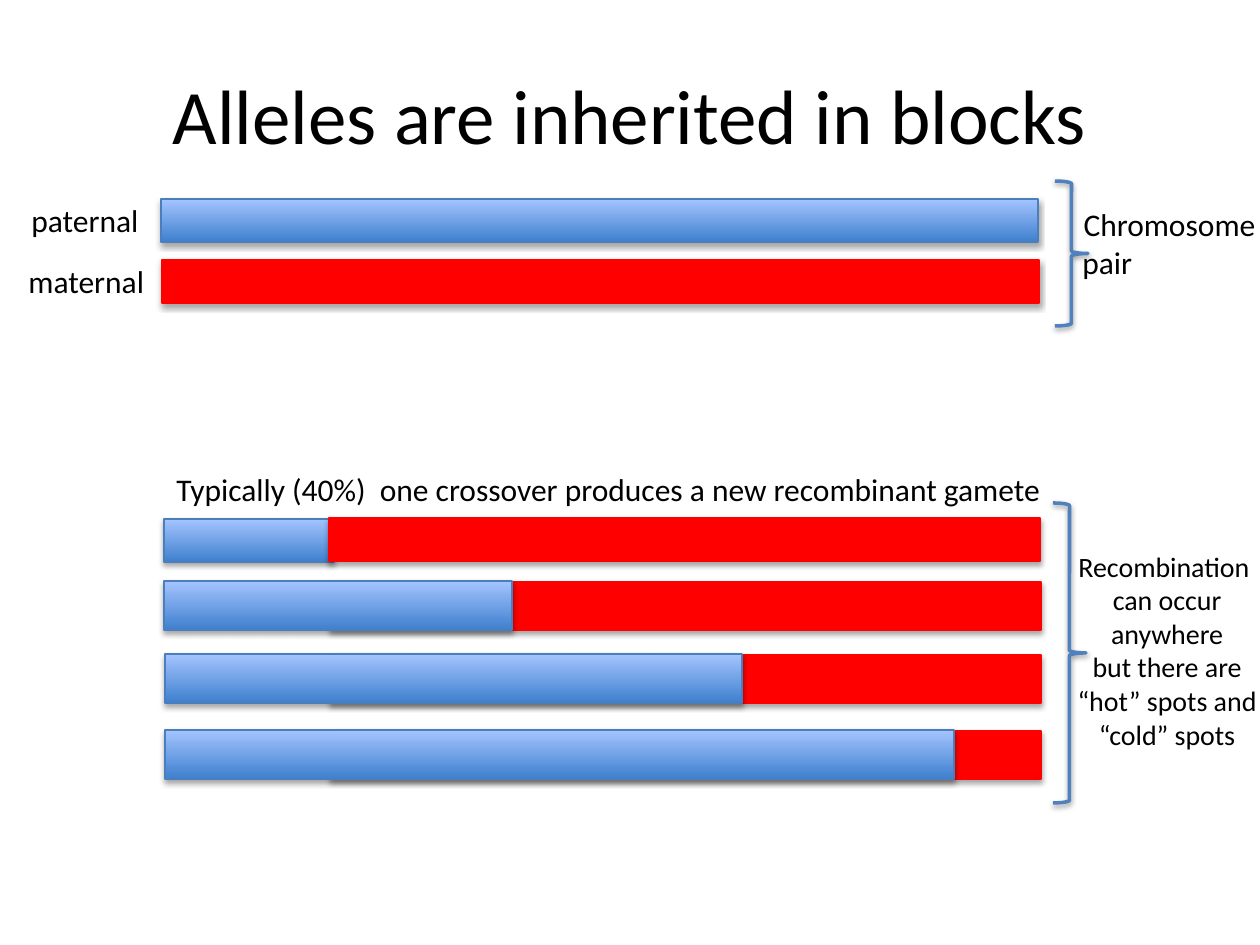
import pptx
import pptx.util
import pptx.dml.color
import pptx.enum.shapes
import pptx.enum.text
import pptx.oxml
import pptx.oxml.ns

SCALE = 914400 / 126
SHAPE = pptx.enum.shapes.MSO_SHAPE
ALIGN = pptx.enum.text.PP_ALIGN
HUES = {
    "text": "000000",
    "deep": "3F80CE",
    "pale": "A4C4FF",
    "edge": "4B7EBC",
    "red": "FF0000",
    "brace": "4F81BD",
    "shade": "000000",
}


def emu(px):
    return pptx.util.Emu(round(px * SCALE))


def hue(name):
    return pptx.dml.color.RGBColor.from_string(HUES[name])


class Deck:
    font = "Calibri"

    def __init__(self):
        self.file = pptx.Presentation()
        self.file.slide_width = emu(1260)
        self.file.slide_height = emu(945)
        self.slide = self.file.slides.add_slide(self.file.slide_layouts[5])

    def style(self, para, size, align):
        para.alignment = align
        para.font.name = self.font
        para.font.size = pptx.util.Pt(size)
        para.font.color.rgb = hue("text")

    def title(self, text, *box):
        shape = self.slide.shapes.title
        shape.left, shape.top, shape.width, shape.height = map(emu, box)
        frame = shape.text_frame
        frame.text = text
        frame.vertical_anchor = pptx.enum.text.MSO_ANCHOR.MIDDLE
        self.style(frame.paragraphs[0], 44, ALIGN.CENTER)

    def label(self, lines, *box, size=18, aligns=(ALIGN.LEFT,)):
        frame = self.slide.shapes.add_textbox(*map(emu, box)).text_frame
        frame.word_wrap = False
        frame.auto_size = pptx.enum.text.MSO_AUTO_SIZE.SHAPE_TO_FIT_TEXT
        frame.text = "\n".join(lines)
        for para, align in zip(frame.paragraphs, aligns * len(lines)):
            self.style(para, size, align)

    def shape(self, kind, box, line, width, drop, alpha):
        shape = self.slide.shapes.add_shape(kind, *map(emu, box))
        shape.line.color.rgb = hue(line)
        shape.line.width = pptx.util.Pt(width)
        shape.shadow.inherit = False
        space = pptx.oxml.ns.nsdecls("a")
        shade = pptx.oxml.parse_xml(
            f'<a:outerShdw {space} blurRad="40000" dist="{drop}" dir="5400000" rotWithShape="0">'
            f'<a:srgbClr val="{HUES["shade"]}"><a:alpha val="{alpha}"/></a:srgbClr></a:outerShdw>'
        )
        shape._element.spPr.find(pptx.oxml.ns.qn("a:effectLst")).append(shade)
        return shape

    def blue(self, *box):
        fill = self.shape(SHAPE.RECTANGLE, box, "edge", 0.75, 23000, 35000).fill
        fill.gradient()
        fill.gradient_angle = 90
        for stop, name in zip(fill.gradient_stops, ("deep", "pale")):
            stop.color.rgb = hue(name)

    def red(self, *box):
        fill = self.shape(SHAPE.RECTANGLE, box, "red", 0.75, 23000, 35000).fill
        fill.solid()
        fill.fore_color.rgb = hue("red")

    def brace(self, *box):
        self.shape(SHAPE.RIGHT_BRACE, box, "brace", 2, 20000, 38000).fill.background()


def main():
    deck = Deck()
    deck.title("Alleles are inherited in blocks", 63, 35, 1134, 158)

    deck.blue(161, 199, 877, 43)
    deck.label(["paternal"], 19, 195, 135, 50)
    deck.red(162, 260, 877, 43)
    deck.label(["maternal"], 16, 256, 142, 50)
    deck.brace(1055, 181, 33, 145)
    deck.label(["Chromosome", "pair"], 1070, 199, 199, 89,
               aligns=(ALIGN.CENTER, ALIGN.LEFT))

    deck.label(["Typically (40%)  one crossover produces a new recombinant gamete"],
               164, 464, 903, 50)
    deck.blue(164, 519, 170, 43)
    deck.red(329, 518, 711, 43)
    for left, top, width in ((164, 581, 348), (165, 654, 577), (165, 730, 789)):
        deck.red(330, top + 1, 711, 48)
        deck.blue(left, top, width, 49)
    deck.brace(1053, 503, 33, 300)
    deck.label(["Recombination", " can occur", " anywhere", " but there are",
                " “hot” spots and", " “cold” spots"],
               1058, 543, 212, 217, size=16, aligns=(ALIGN.CENTER,))

    deck.file.save("out.pptx")


if __name__ == "__main__":
    main()
